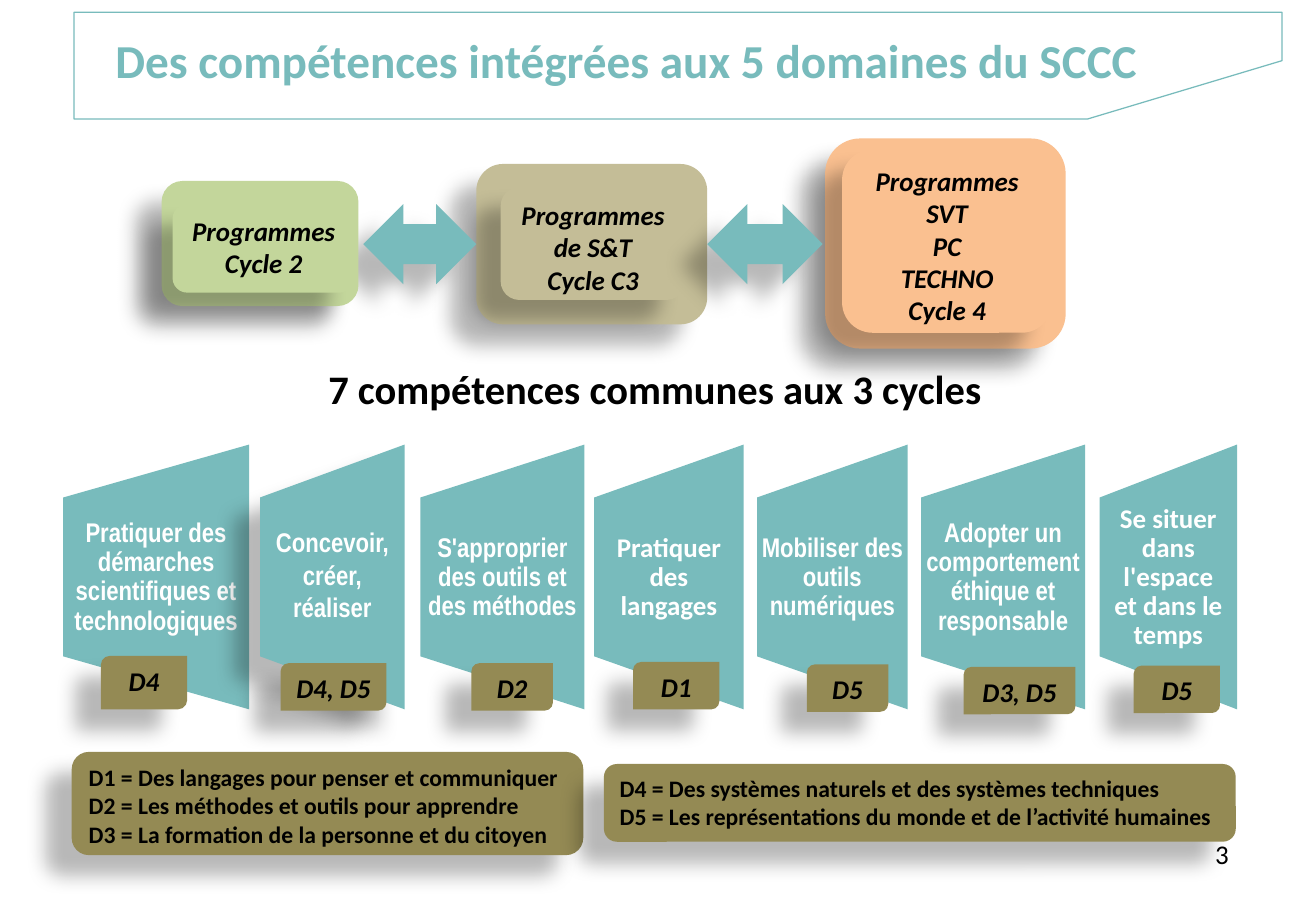
from dataclasses import dataclass

from lxml import etree
from pptx import Presentation
from pptx import util as u
from pptx.dml.color import RGBColor
from pptx.enum import shapes, text
from pptx.oxml import ns

KIND = shapes.MSO_SHAPE
ALIGN = text.PP_ALIGN
ANCHOR = text.MSO_ANCHOR


@dataclass(frozen=True)
class Theme:
    teal: str = "78BBBC"
    green: str = "C3D69B"
    sand: str = "C4BD97"
    orange: str = "FAC090"
    olive: str = "948A54"
    black: str = "000000"
    white: str = "FFFFFF"
    font: str = "Calibri"
    narrow: str = "Arial Narrow"
    title: int = 28
    heading: int = 24
    body: int = 16
    legend: int = 14


THEME = Theme()
DEFAULT_INSETS = (0.1, 0.05)
WIDE_INSETS = (0.12, 0.06)

# Cycle boxes: fill, outer frame, inner frame, lines
CYCLES = {
    "c3": (THEME.sand, (3.92, 1.35, 1.9, 1.32), (4.12, 1.54, 1.52, 0.93),
           ["Programmes de S&T", "Cycle C3"]),
    "c4": (THEME.orange, (6.79, 1.14, 1.98, 1.73), (6.93, 1.23, 1.73, 1.51),
           ["Programmes", "SVT", "PC", "TECHNO", "Cycle 4"]),
    "c2": (THEME.green, (1.33, 1.49, 1.62, 1.03), (1.42, 1.68, 1.5, 0.73),
           ["Programmes Cycle 2"]),
}
ARROWS = [(2.99, 1.68, 0.93, 0.66), (5.82, 1.68, 0.95, 0.66)]

# Skills: left, width, wording, font, side inset, domains, tag frame
SKILLS = [
    (0.52, 1.53, "Pratiquer des démarches scientifiques et technologiques",
     THEME.narrow, 0.04, "D4", (0.83, 5.4, 0.71, 0.44)),
    (2.14, 1.19, "Concevoir, créer, réaliser",
     THEME.narrow, 0.1, "D4, D5", (2.31, 5.46, 0.87, 0.39)),
    (3.46, 1.35, "S'approprier des outils et des méthodes",
     THEME.narrow, 0.04, "D2", (3.88, 5.46, 0.67, 0.39)),
    (4.89, 1.23, "Pratiquer des langages",
     THEME.font, 0.11, "D1", (5.21, 5.45, 0.71, 0.39)),
    (6.23, 1.24, "Mobiliser des outils numériques",
     THEME.narrow, 0, "D5", (6.64, 5.47, 0.67, 0.39)),
    (7.58, 1.35, "Adopter un comportement éthique et responsable",
     THEME.narrow, 0, "D3, D5", (7.93, 5.49, 0.92, 0.39)),
    (9.05, 1.13, "Se situer dans l'espace et dans le temps",
     THEME.font, 0.11, "D5", (9.33, 5.48, 0.71, 0.39)),
]
PANEL_TOP, PANEL_HEIGHT = 3.66, 2.18

LEGENDS = [
    ((0.59, 6.19, 4.21, 0.85),
     ["D1 = Des langages pour penser et communiquer",
      "D2 = Les méthodes et outils pour apprendre",
      "D3 = La formation de la personne et du citoyen"]),
    ((4.97, 6.29, 5.2, 0.64),
     ["D4 = Des systèmes naturels et des systèmes techniques",
      "D5 = Les représentations du monde et de l’activité humaines"]),
]


def inches(frame):
    return [u.Inches(value) for value in frame]


def set_values(target, values):
    for name, value in values.items():
        setattr(target, name, value)


def write(box, lines, insets=DEFAULT_INSETS, anchor=ANCHOR.TOP,
          align=ALIGN.CENTER, spacing=1.0, color=THEME.black, **font):
    """Fill a box with one paragraph per line."""
    side, edge = inches(insets)
    set_values(box.text_frame, {
        "word_wrap": True, "vertical_anchor": anchor,
        "margin_left": side, "margin_right": side,
        "margin_top": edge, "margin_bottom": edge,
    })
    values = {"name": THEME.font, "size": THEME.body, "bold": True, **font}
    values["size"] = u.Pt(values["size"])
    for index, line in enumerate(lines):
        frame = box.text_frame
        para = frame.add_paragraph() if index else frame.paragraphs[0]
        set_values(para, {"alignment": align, "line_spacing": spacing})
        span = para.add_run()
        span.text = line
        set_values(span.font, values)
        span.font.color.rgb = RGBColor.from_string(color)


def add_shadow(box):
    """Cast a soft shadow to the lower left."""
    effects = box._element.spPr.find(ns.qn("a:effectLst"))
    shadow = etree.SubElement(effects, ns.qn("a:outerShdw"), {
        "blurRad": str(u.Pt(11.8)), "dist": str(u.Pt(19.7)),
        "dir": str(141 * 60000), "algn": "ctr", "rotWithShape": "0"})
    color = etree.SubElement(shadow, ns.qn("a:srgbClr"), val=THEME.black)
    etree.SubElement(color, ns.qn("a:alpha"), val="28000")


def add_block(parent, kind, frame, fill, shadow=True):
    box = parent.shapes.add_shape(kind, *inches(frame))
    box.shadow.inherit = False
    box.fill.solid()
    box.fill.fore_color.rgb = RGBColor.from_string(fill)
    box.line.fill.background()
    if shadow:
        add_shadow(box)
    return box


def add_label(parent, frame, line, **style):
    write(parent.shapes.add_textbox(*inches(frame)), [line], **style)


def add_title(page):
    # Banner outline with a cut corner
    points = [inches(point) for point in
              [(10.55, 0.1), (0.61, 0.1), (0.61, 0.98), (8.95, 0.98), (10.55, 0.5)]]
    builder = page.shapes.build_freeform(*points[0], scale=1.0)
    builder.add_line_segments(points[1:], close=True)
    banner = builder.convert_to_shape()
    banner.shadow.inherit = False
    banner.fill.background()
    banner.line.color.rgb = RGBColor.from_string(THEME.teal)
    banner.line.width = u.Pt(0.75)

    title = page.shapes.title
    frame = inches((0.83, 0.2, 9.02, 0.59))
    set_values(title, dict(zip(("left", "top", "width", "height"), frame)))
    write(title, ["Des compétences intégrées aux 5 domaines du SCCC"],
          insets=WIDE_INSETS, align=ALIGN.LEFT, color=THEME.teal, size=THEME.title)
    title.text_frame.auto_size = text.MSO_AUTO_SIZE.NONE


def add_cycle(page, fill, outer, inner, lines):
    group = page.shapes.add_group_shape()
    add_block(group, KIND.ROUNDED_RECTANGLE, outer, fill)
    write(add_block(group, KIND.ROUNDED_RECTANGLE, inner, fill), lines, italic=True)


def add_arrow(page, frame):
    add_block(page, KIND.LEFT_RIGHT_ARROW, frame, THEME.teal)


def add_skill(page, left, width, wording, font, side, domains, tag_frame):
    group = page.shapes.add_group_shape()
    shaded = wording.startswith("Concevoir")
    # The panel is turned a quarter, so its frame is laid out around its centre
    frame = (left + (width - PANEL_HEIGHT) / 2,
             PANEL_TOP + (PANEL_HEIGHT - width) / 2, PANEL_HEIGHT, width)
    panel = add_block(group, KIND.FLOWCHART_MANUAL_OPERATION, frame, THEME.teal, shaded)
    panel.rotation = 90

    style = {"name": font, "color": THEME.white}
    if shaded:
        add_label(group, (left, 4.28, width, 1.13), wording, **style)
    else:
        add_label(group, (left, 4.1, width, 1.31), wording, insets=(side, 0),
                  anchor=ANCHOR.MIDDLE, spacing=0.9, **style)
    tag = add_block(group, KIND.ROUND_2_DIAG_RECTANGLE, tag_frame, THEME.olive)
    write(tag, [domains], italic=True)


def add_legend(page, frame, lines):
    box = add_block(page, KIND.ROUNDED_RECTANGLE, frame, THEME.olive)
    write(box, lines, align=ALIGN.LEFT, size=THEME.legend)


def main():
    deck = Presentation()
    set_values(deck, {"slide_width": u.Inches(10.83), "slide_height": u.Inches(7.5)})
    page = deck.slides.add_slide(deck.slide_layouts.get_by_name("Title Only"))
    add_title(page)

    # Programmes of the three cycles, linked by arrows
    add_cycle(page, *CYCLES["c3"])
    add_cycle(page, *CYCLES["c4"])
    add_arrow(page, ARROWS[0])
    add_cycle(page, *CYCLES["c2"])
    add_arrow(page, ARROWS[1])

    # Seven shared skills and the key to their domains
    for skill in SKILLS:
        add_skill(page, *skill)
    for legend in LEGENDS:
        add_legend(page, *legend)
    add_label(page, (0.44, 2.94, 9.9, 0.52), "7 compétences communes aux 3 cycles",
              insets=WIDE_INSETS, size=THEME.heading)
    add_label(page, (9.5, 6.85, 1.11, 0.5), "3", bold=False)
    deck.save("out.pptx")


if __name__ == "__main__":
    main()
